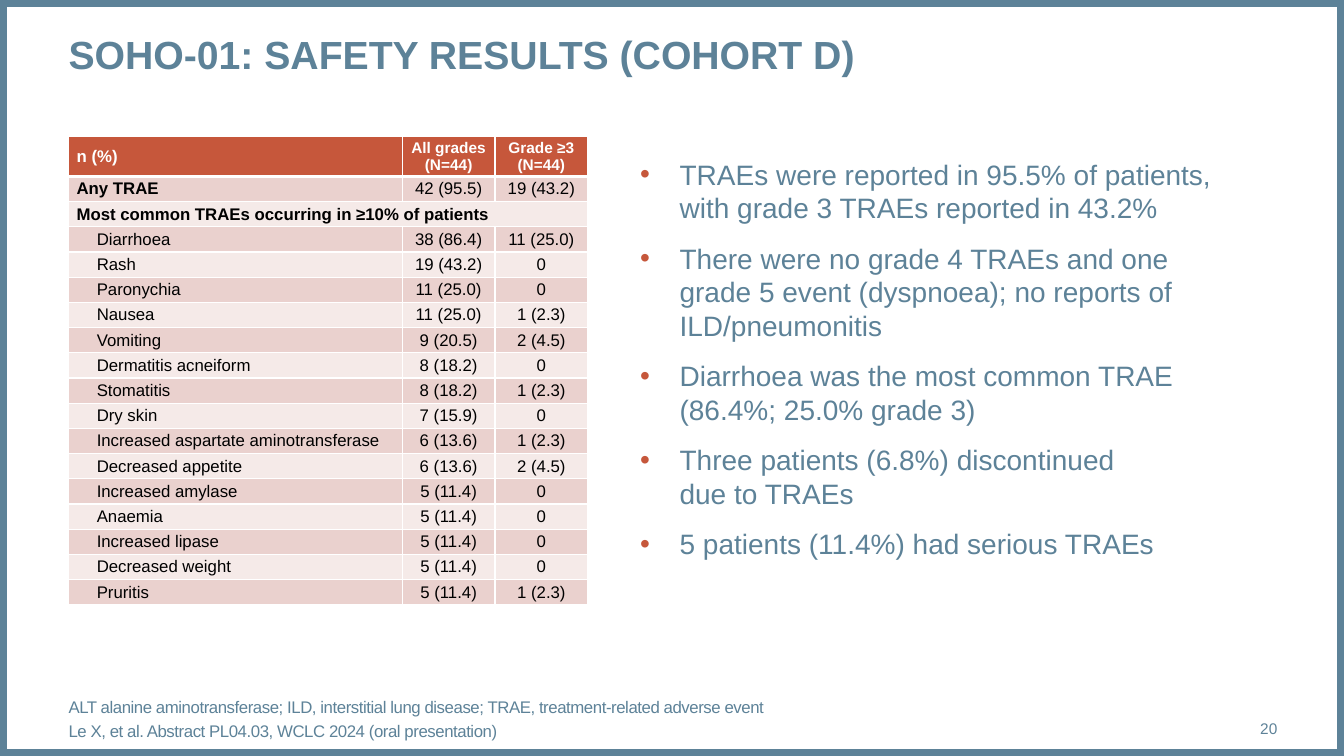
"""Build the SOHO-01 cohort D safety slide: adverse event table beside key findings."""
import pptx
import pptx.dml.color
import pptx.enum.shapes
import pptx.enum.text
import pptx.oxml
import pptx.oxml.ns
import pptx.util

SLATE, RUST, WHITE, BLACK = "5D8298", "C6573B", "FFFFFF", "000000"
BANDS = ["EAD1CE", "F5EAE8"]
FONT = "Arial"

TITLE = "SOHO-01: SAFETY RESULTS (COHORT D)"
FINDINGS = [
    "TRAEs were reported in 95.5% of patients,\vwith grade 3 TRAEs reported in 43.2%",
    "There were no grade 4 TRAEs and one\vgrade 5 event (dyspnoea); no reports of ILD/pneumonitis",
    "Diarrhoea was the most common TRAE\v(86.4%; 25.0% grade 3)",
    "Three patients (6.8%) discontinued\vdue to TRAEs",
    "5 patients (11.4%) had serious TRAEs",
]
FOOTNOTES = [
    "ALT alanine aminotransferase; ILD, interstitial lung disease; TRAE, treatment-related adverse event",
    "Le X, et al. Abstract PL04.03, WCLC 2024 (oral presentation)",
]
PAGE = "20"
HEADER = ("n (%)", "All grades\v(N=44)", "Grade ≥3\v(N=44)")
OVERALL = ("Any TRAE", "42 (95.5)", "19 (43.2)")
SECTION = ("Most common TRAEs occurring in ≥10% of patients",)
EVENTS = [
    ("Diarrhoea", "38 (86.4)", "11 (25.0)"),
    ("Rash", "19 (43.2)", "0"),
    ("Paronychia", "11 (25.0)", "0"),
    ("Nausea", "11 (25.0)", "1 (2.3)"),
    ("Vomiting", "9 (20.5)", "2 (4.5)"),
    ("Dermatitis acneiform", "8 (18.2)", "0"),
    ("Stomatitis", "8 (18.2)", "1 (2.3)"),
    ("Dry skin", "7 (15.9)", "0"),
    ("Increased aspartate aminotransferase", "6 (13.6)", "1 (2.3)"),
    ("Decreased appetite", "6 (13.6)", "2 (4.5)"),
    ("Increased amylase", "5 (11.4)", "0"),
    ("Anaemia", "5 (11.4)", "0"),
    ("Increased lipase", "5 (11.4)", "0"),
    ("Decreased weight", "5 (11.4)", "0"),
    ("Pruritis", "5 (11.4)", "1 (2.3)"),
]
ROWS = [HEADER, OVERALL, SECTION, *EVENTS]
COLUMNS = [3.31, 0.92, 0.92]
HEADER_H, ROW_H = 0.4, 0.25
SLIDE_W, SLIDE_H, LEFT, RIGHT = 13.33, 7.5, 0.68, 12.67

Inches, Pt = pptx.util.Inches, pptx.util.Pt
ALIGN, ANCHOR = pptx.enum.text.PP_ALIGN, pptx.enum.text.MSO_ANCHOR


def rgb(color):
    return pptx.dml.color.RGBColor.from_string(color)


def add_xml(parent, tag, **attributes):
    element = pptx.oxml.ns.qn(tag)
    child = parent.makeelement(element, attributes)
    parent.append(child)
    return child


def set_font(p, size, color, bold=False):
    p.font.name, p.font.size, p.font.bold = FONT, Pt(size), bold
    p.font.color.rgb = rgb(color)


def place(sp, left, top, width, height, anchor):
    sp.left, sp.top, sp.width, sp.height = map(Inches, (left, top, width, height))
    tf = sp.text_frame
    tf.word_wrap = True
    tf.auto_size = pptx.enum.text.MSO_AUTO_SIZE.NONE
    tf.vertical_anchor = anchor
    tf.margin_left = tf.margin_top = tf.margin_right = tf.margin_bottom = 0
    return tf


def write(tf, lines, size, gap, bullet=None, indent=0):
    tf.text = "\n".join(lines)
    for i, p in enumerate(tf.paragraphs):
        p.space_before = Pt(gap if i else 0)
        pPr = p._p.get_or_add_pPr()
        pPr.set("marL", str(Inches(indent)))
        pPr.set("indent", str(Inches(-indent)))
        if bullet:
            add_xml(add_xml(pPr, "a:buClr"), "a:srgbClr", val=RUST)
            add_xml(pPr, "a:buFont", typeface=FONT)
            add_xml(pPr, "a:buChar", char=bullet)
        else:
            add_xml(pPr, "a:buNone")
        set_font(p, size, SLATE)


def add_borders(cell, bottom):
    tcPr = cell._tc.get_or_add_tcPr()
    for i, (tag, width) in enumerate([("a:lnL", 1), ("a:lnR", 1), ("a:lnT", 1), ("a:lnB", bottom)]):
        line = tcPr.makeelement(pptx.oxml.ns.qn(tag), {"w": str(Pt(width))})
        add_xml(add_xml(line, "a:solidFill"), "a:srgbClr", val=WHITE)
        tcPr.insert(i, line)


def format_cell(cell, row, col, text):
    header = row == 0
    pad = 0 if header else Inches(0.03)
    cell.margin_left, cell.margin_right = Inches(0 if col else 0.08), 0
    cell.margin_top = cell.margin_bottom = pad
    cell.vertical_anchor = ANCHOR.MIDDLE
    cell.fill.solid()
    cell.fill.fore_color.rgb = rgb(RUST if header else BANDS[(row - 1) % 2])
    add_borders(cell, 3 if header else 1)
    p = cell.text_frame.paragraphs[0]
    p.text = text
    p.alignment = ALIGN.CENTER if col else ALIGN.LEFT
    if ROWS[row] in EVENTS and col == 0:
        p._p.get_or_add_pPr().set("indent", str(Inches(0.2)))
    bold = header or (col == 0 and ROWS[row] in (OVERALL, SECTION))
    set_font(p, 11 if header and col else 12, WHITE if header else BLACK, bold)


def add_events_table(slide):
    height = HEADER_H + ROW_H * (len(ROWS) - 1)
    frame = slide.shapes.add_table(len(ROWS), len(COLUMNS), Inches(LEFT), Inches(1.35),
                                   Inches(sum(COLUMNS)), Inches(height))
    table = frame.table
    for column, width in zip(table.columns, COLUMNS):
        column.width = Inches(width)
    for r, values in enumerate(ROWS):
        table.rows[r].height = Inches(ROW_H if r else HEADER_H)
        for c in range(len(COLUMNS)):
            format_cell(table.cell(r, c), r, c, values[c] if c < len(values) else "")
    section = ROWS.index(SECTION)
    table.cell(section, 0).merge(table.cell(section, len(COLUMNS) - 1))


def add_frame(slide, prs):
    sp = slide.shapes.add_shape(pptx.enum.shapes.MSO_SHAPE.RECTANGLE, 0, 0,
                                prs.slide_width, prs.slide_height)
    sp.shadow.inherit = False
    sp.fill.background()
    sp.line.color.rgb = rgb(SLATE)
    sp.line.width = Pt(10)
    slide.shapes._spTree.insert(2, sp._element)


def main():
    prs = pptx.Presentation()
    prs.slide_width, prs.slide_height = Inches(SLIDE_W), Inches(SLIDE_H)
    slide = prs.slides.add_slide(prs.slide_layouts[3])
    title, findings, footnotes = slide.placeholders
    add_frame(slide, prs)

    tf = place(title, LEFT, 0.28, RIGHT - LEFT, 0.94, ANCHOR.TOP)
    tf.text = TITLE
    p = tf.paragraphs[0]
    p.alignment, p.line_spacing = ALIGN.LEFT, Pt(35)
    set_font(p, 28, SLATE, True)

    tf = place(findings, 6.35, 1.56, RIGHT - 6.35, 4.95, ANCHOR.TOP)
    write(tf, FINDINGS, 20, 12, "•", 0.39)
    for p in tf.paragraphs:
        p.line_spacing = Pt(24)

    tf = place(footnotes, LEFT, 6.95, 11.13, 0.4, ANCHOR.BOTTOM)
    write(tf, FOOTNOTES, 12, 3)
    for p in tf.paragraphs:
        for r in p.runs:
            r._r.get_or_add_rPr().set("spc", "-30")

    page = slide.shapes.add_textbox(0, 0, 0, 0)
    tf = place(page, 11.81, 7.03, RIGHT - 11.81, 0.4, ANCHOR.MIDDLE)
    write(tf, [PAGE], 11, 0)
    tf.paragraphs[0].alignment = ALIGN.RIGHT

    add_events_table(slide)
    prs.save("out.pptx")


if __name__ == "__main__":
    main()
